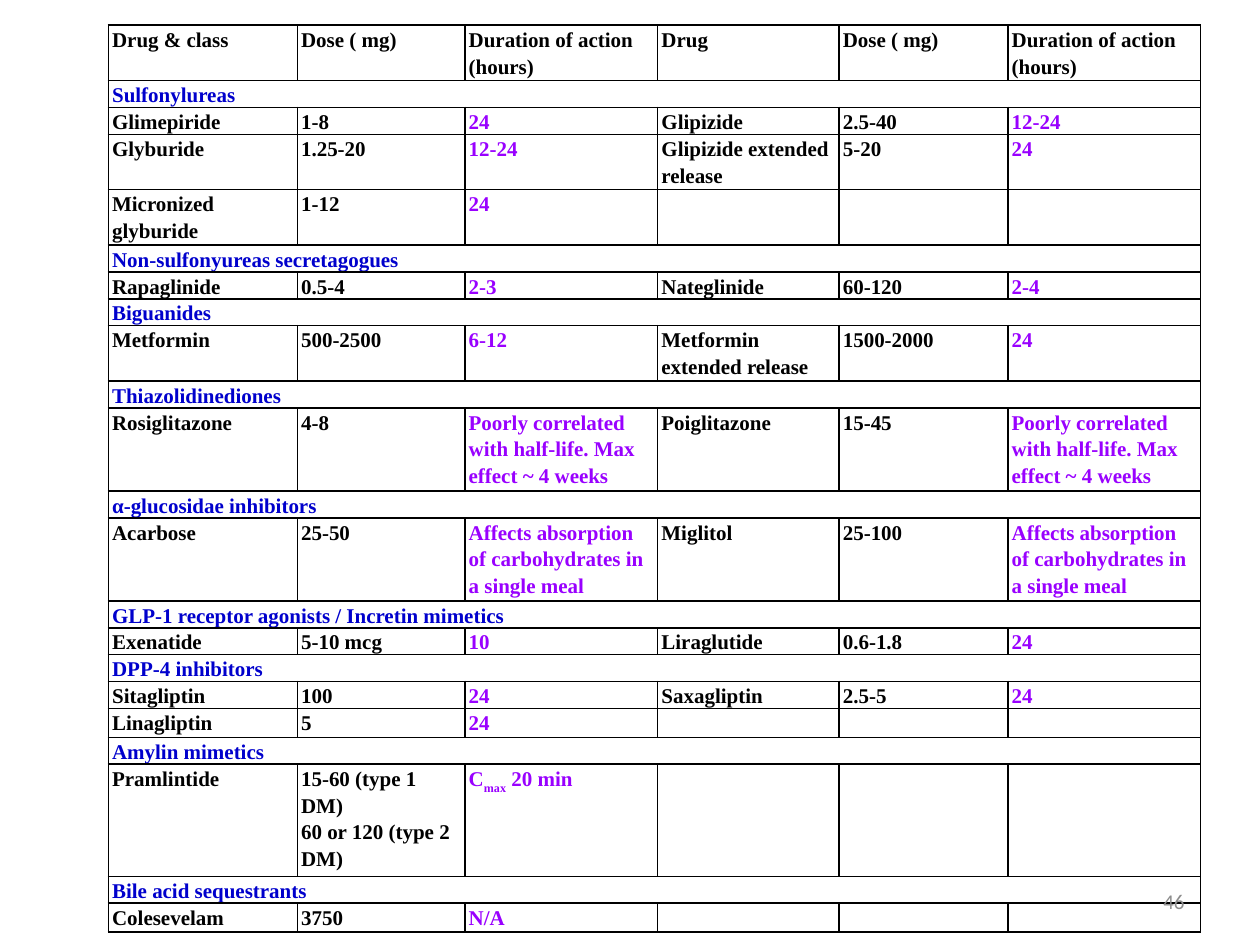
from lxml import etree
from pptx import Presentation
from pptx.dml.color import RGBColor
from pptx.enum.text import MSO_ANCHOR, PP_ALIGN
from pptx.oxml import parse_xml
from pptx.oxml.ns import nsdecls, qn
from pptx.util import Inches, Pt

BLACK = RGBColor(0x00, 0x00, 0x00)
BLUE = RGBColor(0x00, 0x00, 0xCC)
PURPLE = RGBColor(0x99, 0x00, 0xFF)
GREY = RGBColor(0x8C, 0x8C, 0x8C)

COLUMN_WIDTHS = [1.5, 1.33, 1.53, 1.44, 1.34, 1.53]
DURATION_COLUMNS = (2, 5)
TEXT_SIZE = Pt(12)
HEADINGS = ("Drug & class", "Dose ( mg)", "Duration of action (hours)",
            "Drug", "Dose ( mg)", "Duration of action (hours)")
WEEKS = "Poorly correlated with half-life. Max effect ~ 4 weeks"
MEAL = "Affects absorption of carbohydrates in a single meal"
PEAK_TIME = [("C", 0), ("max", -25000), (" 20 min", 0)]

ROWS = [
    (0.44, HEADINGS),
    (0.21, ("Sulfonylureas",)),
    (0.21, ("Glimepiride", "1-8", "24", "Glipizide", "2.5-40", "12-24")),
    (0.44, ("Glyburide", "1.25-20", "12-24", "Glipizide extended release", "5-20", "24")),
    (0.44, ("Micronized glyburide", "1-12", "24", "", "", "")),
    (0.21, ("Non-sulfonyureas secretagogues",)),
    (0.21, ("Rapaglinide", "0.5-4", "2-3", "Nateglinide", "60-120", "2-4")),
    (0.21, ("Biguanides",)),
    (0.44, ("Metformin", "500-2500", "6-12", "Metformin extended release", "1500-2000", "24")),
    (0.21, ("Thiazolidinediones",)),
    (0.66, ("Rosiglitazone", "4-8", WEEKS, "Poiglitazone", "15-45", WEEKS)),
    (0.21, ("α-glucosidae inhibitors",)),
    (0.66, ("Acarbose", "25-50", MEAL, "Miglitol", "25-100", MEAL)),
    (0.21, ("GLP-1 receptor agonists / Incretin mimetics",)),
    (0.21, ("Exenatide", "5-10 mcg", "10", "Liraglutide", "0.6-1.8", "24")),
    (0.21, ("DPP-4 inhibitors",)),
    (0.21, ("Sitagliptin", "100", "24", "Saxagliptin", "2.5-5", "24")),
    (0.23, ("Linagliptin", "5", "24", "", "", "")),
    (0.21, ("Amylin mimetics",)),
    (0.89, ("Pramlintide", "15-60 (type 1 DM)\n60 or 120 (type 2 DM)", PEAK_TIME, "", "", "")),
    (0.21, ("Bile acid sequestrants",)),
    (0.23, ("Colesevelam", "3750", "N/A", "", "", "")),
]


def add_span(para, text, font_name, color, bold=False, baseline=0):
    """Add one formatted run to a paragraph."""
    span = para.add_run()
    span.text = text
    span.font.name = font_name
    span.font.size = TEXT_SIZE
    span.font.bold = bold
    span.font.color.rgb = color
    if baseline:
        span._r.get_or_add_rPr().set("baseline", str(baseline))


def format_cell(cell):
    """Give a cell narrow margins, no fill and thin black borders."""
    cell.margin_left = cell.margin_right = Inches(0.03)
    cell.margin_top = cell.margin_bottom = 0
    cell.fill.background()
    properties = cell._tc.get_or_add_tcPr()
    for index, side in enumerate(("lnL", "lnR", "lnT", "lnB")):
        properties.insert(index, parse_xml(
            f'<a:{side} {nsdecls("a")} w="12700"><a:solidFill>'
            f'<a:srgbClr val="{BLACK}"/></a:solidFill></a:{side}>'))


def fill_cell(cell, content, color):
    """Write plain lines or a list of text and baseline pairs into a cell."""
    lines = [[(line, 0)] for line in content.split("\n")] if isinstance(content, str) else [content]
    frame = cell.text_frame
    for index, pieces in enumerate(lines):
        para = frame.add_paragraph() if index else frame.paragraphs[0]
        para.line_spacing = 1.15
        for text, baseline in pieces:
            if text:
                add_span(para, text, "Times New Roman", color, True, baseline)
            else:
                end = etree.SubElement(para._p, qn("a:endParaRPr"))
                end.set("sz", str(int(TEXT_SIZE.pt * 100)))


def add_drug_table(page, left, top, width):
    """Place the table of drugs, doses and durations."""
    height = Inches(sum(row_height for row_height, _ in ROWS))
    table = page.shapes.add_table(len(ROWS), len(COLUMN_WIDTHS), left, top, width, height).table
    table.first_row = table.horz_banding = False
    for column, column_width in zip(table.columns, COLUMN_WIDTHS):
        column.width = Inches(column_width)
    for row_index, (row_height, contents) in enumerate(ROWS):
        row = table.rows[row_index]
        row.height = Inches(row_height)
        is_class = len(contents) == 1
        for cell in row.cells:
            format_cell(cell)
        if is_class:
            row.cells[0].merge(row.cells[len(COLUMN_WIDTHS) - 1])
        for column_index, content in enumerate(contents):
            color = BLUE if is_class else BLACK
            if row_index and column_index in DURATION_COLUMNS:
                color = PURPLE
            fill_cell(row.cells[column_index], content, color)


def add_page_number(page, left, top, width, height):
    """Place the right-aligned page number."""
    box = page.shapes.add_textbox(left, top, width, height)
    frame = box.text_frame
    frame.word_wrap = True
    frame.vertical_anchor = MSO_ANCHOR.MIDDLE
    para = frame.paragraphs[0]
    para.alignment = PP_ALIGN.RIGHT
    add_span(para, "46", "Calibri", GREY)


def main():
    """Build and save the deck."""
    deck = Presentation()
    deck.slide_width, deck.slide_height = Inches(10), Inches(7.5)
    page = deck.slides.add_slide(deck.slide_layouts[6])
    add_drug_table(page, Inches(0.86), Inches(0.2), Inches(8.67))
    add_page_number(page, Inches(7.17), Inches(6.95), Inches(2.33), Inches(0.4))
    deck.save("out.pptx")


if __name__ == "__main__":
    main()
